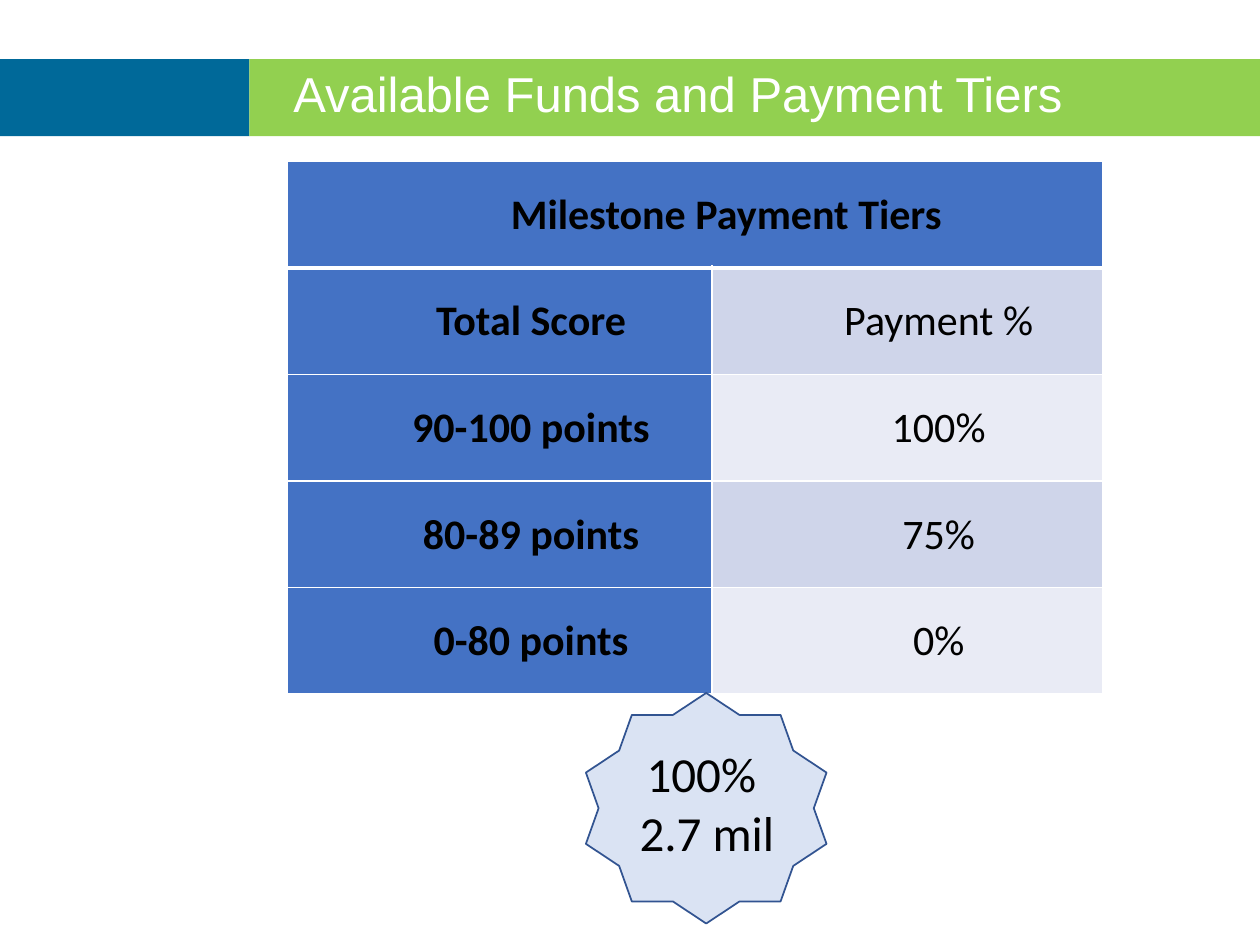
from lxml import etree
from pptx import Presentation
from pptx.dml.color import RGBColor
from pptx.enum.shapes import MSO_SHAPE
from pptx.enum.text import MSO_ANCHOR, PP_ALIGN
from pptx.oxml.ns import qn
from pptx.util import Inches, Pt

RECTANGLE, STAR = MSO_SHAPE.RECTANGLE, MSO_SHAPE.STAR_10_POINT
MIDDLE, LEFT, CENTER = MSO_ANCHOR.MIDDLE, PP_ALIGN.LEFT, PP_ALIGN.CENTER

COLORS = {
    "teal": "006999", "green": "92D050", "white": "FFFFFF", "black": "000000",
    "blue": "4472C4", "band_dark": "CFD5EA", "band_light": "E9EBF5",
    "star": "DAE3F3", "star_line": "325491",
}
TITLE = "Available Funds and Payment Tiers"
TIERS = [
    ("Milestone Payment Tiers", ""),
    ("Total Score", "Payment %"),
    ("90-100 points", "100%"),
    ("80-89 points", "75%"),
    ("0-80 points", "0%"),
]
FUNDS = ["100% ", "2.7 mil"]
COLUMN_WIDTHS = [3.37, 3.1]
TABLE_HEIGHT = 4.23
BANNER_TOP, BANNER_HEIGHT, BANNER_SPLIT = 0.47, 0.61, 1.98


def color(name):
    return RGBColor.from_string(COLORS[name])


def write(frame, lines, font="Calibri", size=28, ink="black", bold=False,
          align=CENTER, indent=0, spacing=None):
    frame.word_wrap = True
    for index, line in enumerate(lines):
        para = frame.paragraphs[0] if index == 0 else frame.add_paragraph()
        para.alignment = align
        para.line_spacing = spacing
        if indent:
            para._p.get_or_add_pPr().set("marL", str(Inches(indent)))
        span = para.add_run()
        span.text = line
        span.font.name, span.font.size, span.font.bold = font, Pt(size), bold
        span.font.color.rgb = color(ink)


def add_shape(page, kind, area, fill, line=None):
    shape = page.shapes.add_shape(kind, *map(Inches, area))
    shape.shadow.inherit = False
    shape.fill.solid()
    shape.fill.fore_color.rgb = color(fill)
    if line:
        shape.line.color.rgb = color(line)
        shape.line.width = Pt(1)
    else:
        shape.line.fill.background()


def add_text(page, area, lines, **style):
    box = page.shapes.add_textbox(*map(Inches, area))
    write(box.text_frame, lines, **style)


def set_borders(cell, **widths):
    properties = cell._tc.get_or_add_tcPr()
    for side in "LRTB":
        edge = etree.SubElement(properties, qn("a:ln" + side), w=str(Pt(widths.get(side, 1))))
        fill = etree.SubElement(edge, qn("a:solidFill"))
        etree.SubElement(fill, qn("a:srgbClr"), val=COLORS["white"])


def add_tiers(page):
    area = (2.28, 1.28, sum(COLUMN_WIDTHS), TABLE_HEIGHT)
    table = page.shapes.add_table(len(TIERS), len(COLUMN_WIDTHS), *map(Inches, area)).table
    for column, width in zip(table.columns, COLUMN_WIDTHS):
        column.width = Inches(width)
    table.cell(0, 0).merge(table.cell(0, 1))
    for r, texts in enumerate(TIERS):
        for c, text in enumerate(texts):
            cell = table.cell(r, c)
            heading = r == 0 or c == 0
            cell.vertical_anchor = MIDDLE
            cell.margin_left = cell.margin_right = Inches(0.07)
            cell.margin_top, cell.margin_bottom = Inches(0.01), 0
            set_borders(cell, T=3 if r == 1 else 1, B=3 if r == 0 else 1)
            cell.fill.solid()
            band = "band_dark" if r % 2 else "band_light"
            cell.fill.fore_color.rgb = color("blue" if heading else band)
            if text:
                write(cell.text_frame, [text], size=24, bold=heading, indent=0.5)


def main():
    deck = Presentation()
    deck.slide_width, deck.slide_height = Inches(10), Inches(7.5)
    page = deck.slides.add_slide(deck.slide_layouts[6])
    add_shape(page, RECTANGLE, (0, BANNER_TOP, BANNER_SPLIT, BANNER_HEIGHT), "teal")
    add_shape(page, RECTANGLE, (BANNER_SPLIT, BANNER_TOP, 10 - BANNER_SPLIT, BANNER_HEIGHT), "green")
    add_text(page, (2.23, 0.51, 7.61, 0.64), [TITLE], font="Arial", ink="white",
             align=LEFT, spacing=0.9)
    add_tiers(page)
    add_shape(page, STAR, (4.65, 5.5, 1.91, 1.83), "star", "star_line")
    add_text(page, (4.82, 5.85, 1.58, 1.04), FUNDS)
    deck.save("out.pptx")


if __name__ == "__main__":
    main()
